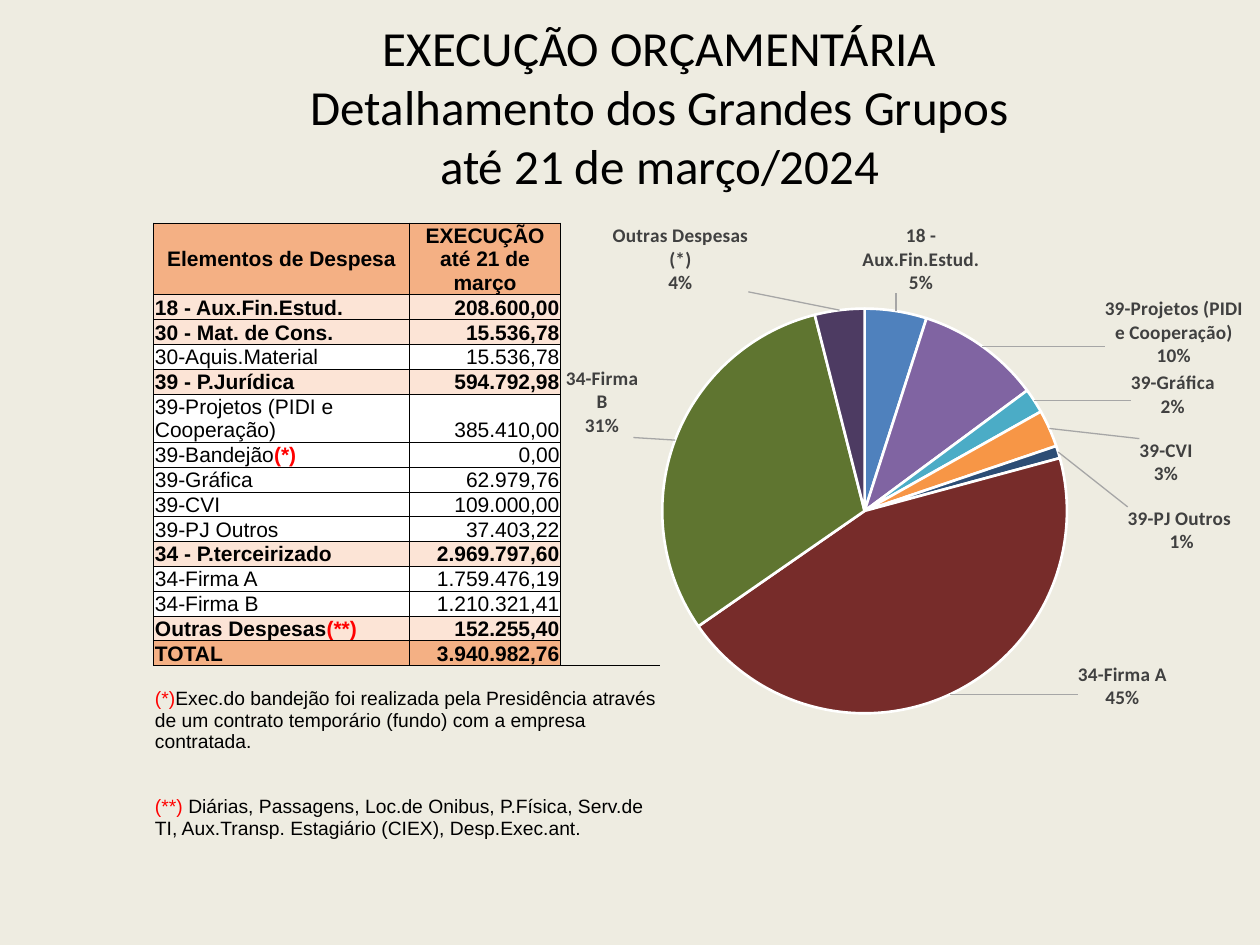
from copy import deepcopy
from dataclasses import dataclass

from lxml.etree import SubElement
from pptx import Presentation
from pptx.chart.data import CategoryChartData
from pptx.dml.color import RGBColor
from pptx.enum.chart import XL_CHART_TYPE, XL_LABEL_POSITION
from pptx.enum.text import MSO_ANCHOR, PP_ALIGN
from pptx.oxml import parse_xml
from pptx.oxml.ns import nsdecls, qn
from pptx.util import Inches, Pt

BLACK = RGBColor(0x00, 0x00, 0x00)
WHITE = RGBColor(0xFF, 0xFF, 0xFF)
RED = RGBColor(0xFF, 0x00, 0x00)
CREAM = RGBColor(0xEE, 0xEC, 0xE1)
ORANGE = RGBColor(0xF4, 0xB0, 0x84)
PEACH = RGBColor(0xFC, 0xE4, 0xD6)
LABEL_GRAY = RGBColor(0x40, 0x40, 0x40)
NO_TABLE_STYLE = "{2D5ABB26-0587-4C30-8999-92F81FD0307C}"


@dataclass
class Expense:
    name: str
    amount: str
    fill: RGBColor = WHITE
    mark: str = ""


@dataclass
class Slice:
    name: str
    percent: int
    color: str
    label_offset: tuple[float, float] | None = None


EXPENSES = [
    Expense("18 - Aux.Fin.Estud.", "208.600,00", PEACH),
    Expense("30 - Mat. de Cons.", "15.536,78", PEACH),
    Expense("30-Aquis.Material", "15.536,78"),
    Expense("39 - P.Jurídica", "594.792,98", PEACH),
    Expense("39-Projetos (PIDI e Cooperação)", "385.410,00"),
    Expense("39-Bandejão", "0,00", mark="(*)"),
    Expense("39-Gráfica", "62.979,76"),
    Expense("39-CVI", "109.000,00"),
    Expense("39-PJ Outros", "37.403,22"),
    Expense("34 - P.terceirizado", "2.969.797,60", PEACH),
    Expense("34-Firma A", "1.759.476,19"),
    Expense("34-Firma B", "1.210.321,41"),
    Expense("Outras Despesas", "152.255,40", PEACH, "(**)"),
    Expense("TOTAL", "3.940.982,76", ORANGE),
]
NOTES = [
    ("(*)", "Exec.do bandejão foi realizada pela Presidência através de um contrato "
            "temporário (fundo) com a empresa contratada."),
    ("(**) ", "Diárias, Passagens, Loc.de Onibus, P.Física, Serv.de TI, "
              "Aux.Transp. Estagiário (CIEX), Desp.Exec.ant."),
]
SLICES = [
    Slice("18 - Aux.Fin.Estud.", 5, "4F81BD", (-0.05, -0.02)),
    Slice("30-Bandejão", 0, "C0504D"),
    Slice("30-Aquis.Material", 0, "9BBB59"),
    Slice("39-Projetos (PIDI e Cooperação)", 10, "8064A2", (0.17, 0.05)),
    Slice("39-Gráfica", 2, "4BACC6", (0.13, 0.04)),
    Slice("39-CVI", 3, "F79646", (0.12, 0.11)),
    Slice("39-PJ Outros ", 1, "2C4D75", (0.09, 0.19)),
    Slice("34-Firma A", 45, "772C2A", (0.18, -0.07)),
    Slice("34-Firma B", 31, "5F7530", (-0.05, 0)),
    Slice("Outras Despesas (*)", 4, "4D3B62", (-0.13, -0.02)),
]


def add_title(slide) -> None:
    title = slide.shapes.title
    title.left, title.top = Inches(0.51), Inches(0.13)
    title.width, title.height = Inches(9.45), Inches(1.42)
    title.text_frame.text = (
        "EXECUÇÃO ORÇAMENTÁRIA\vDetalhamento dos Grandes Grupos\vaté 21 de março/2024"
    )
    para = title.text_frame.paragraphs[0]
    para.alignment = PP_ALIGN.CENTER
    para.font.size, para.font.name = Pt(28), "Calibri"
    para.font.color.rgb = BLACK


def manual_layout(x: float, y: float, extra: str = "") -> str:
    return (f'<c:layout {nsdecls("c")}><c:manualLayout>{extra}'
            f'<c:x val="{x}"/><c:y val="{y}"/>')


def slice_label(index: int, item: Slice, text_properties):
    head = f'<c:dLbl {nsdecls("c")}><c:idx val="{index}"/>'
    if item.label_offset is None:
        return parse_xml(head + '<c:delete val="1"/></c:dLbl>')
    label = parse_xml(
        head + manual_layout(*item.label_offset) + "</c:manualLayout></c:layout>"
        '<c:dLblPos val="outEnd"/><c:showLegendKey val="0"/><c:showVal val="0"/>'
        '<c:showCatName val="1"/><c:showSerName val="0"/><c:showPercent val="1"/>'
        '<c:showBubbleSize val="0"/><c:separator>\n</c:separator></c:dLbl>'
    )
    label.insert(2, deepcopy(text_properties))
    return label


def add_pie(slide) -> None:
    data = CategoryChartData()
    data.categories = [item.name for item in SLICES]
    data.add_series("Series 1", [item.percent for item in SLICES])
    chart = slide.shapes.add_chart(
        XL_CHART_TYPE.PIE, Inches(4.49), Inches(1.78), Inches(5.51), Inches(4.36), data
    ).chart
    chart.has_legend = chart.has_title = False
    chart.font.size, chart.font.name = Pt(11), "Calibri"
    chart.font.color.rgb = BLACK
    plot = chart.plots[0]
    plot.vary_by_categories = True
    series = plot.series[0]
    for index, item in enumerate(SLICES):
        wedge = series.points[index].format
        wedge.fill.solid()
        wedge.fill.fore_color.rgb = RGBColor.from_string(item.color)
        wedge.line.color.rgb = WHITE
        wedge.line.width = Pt(1.5)

    labels = series.data_labels
    labels.show_value = False
    labels.show_category_name = labels.show_percentage = True
    labels.number_format, labels.number_format_is_linked = "0%", False
    labels.position = XL_LABEL_POSITION.OUTSIDE_END
    labels.font.size, labels.font.name, labels.font.bold = Pt(11), "Calibri", True
    labels.font.color.rgb = LABEL_GRAY
    element = labels._element
    text_properties = element.find(qn("c:txPr"))
    for index, item in enumerate(SLICES):
        element.insert(index, slice_label(index, item, text_properties))
    for old in element.findall(qn("c:showLeaderLines")):
        element.remove(old)
    SubElement(element, qn("c:separator")).text = "\n"
    SubElement(element, qn("c:showLeaderLines")).set("val", "1")
    element.append(parse_xml(
        f'<c:leaderLines {nsdecls("c", "a")}><c:spPr><a:ln w="9525"><a:solidFill>'
        '<a:srgbClr val="A6A6A6"/></a:solidFill></a:ln></c:spPr></c:leaderLines>'
    ))

    area = chart._chartSpace.chart.plotArea
    for old in area.findall(qn("c:layout")):
        area.remove(old)
    modes = ('<c:layoutTarget val="inner"/><c:xMode val="edge"/><c:yMode val="edge"/>')
    area.insert(0, parse_xml(
        manual_layout(0.139, 0.134, modes)
        + '<c:w val="0.583"/><c:h val="0.776"/></c:manualLayout></c:layout>'
    ))


def add_borders(cell) -> None:
    properties = cell._tc.get_or_add_tcPr()
    for position, side in enumerate(("lnL", "lnR", "lnT", "lnB")):
        properties.insert(position, parse_xml(
            f'<a:{side} {nsdecls("a")} w="6350"><a:solidFill>'
            f'<a:srgbClr val="000000"/></a:solidFill></a:{side}>'
        ))


def write_cell(cell, spans: list[tuple[str, RGBColor]], size: int = 12,
               bold: bool = False, alignment=PP_ALIGN.LEFT, anchor=MSO_ANCHOR.BOTTOM,
               fill: RGBColor | None = None) -> None:
    cell.margin_left = cell.margin_right = cell.margin_top = Inches(0.01)
    cell.margin_bottom = 0
    cell.vertical_anchor = anchor
    if fill is None:
        cell.fill.background()
    else:
        cell.fill.solid()
        cell.fill.fore_color.rgb = fill
        add_borders(cell)
    para = cell.text_frame.paragraphs[0]
    para.alignment = alignment
    para.font.size, para.font.name, para.font.bold = Pt(size), "Arial", bold
    for text, color in spans:
        span = para.add_run()
        span.text = text
        span.font.color.rgb = color
    if not spans:
        SubElement(para._p, qn("a:endParaRPr")).set("sz", str(size * 100))


def add_expense_table(slide) -> None:
    widths = [2.03, 1.2, 0.79]
    heights = [0.53] + [0.18] * len(EXPENSES) + [0.69] * len(NOTES)
    table = slide.shapes.add_table(
        len(heights), len(widths), Inches(1.22), Inches(1.77),
        Inches(sum(widths)), Inches(sum(heights))
    ).table
    table.first_row = table.horz_banding = False
    table._tbl.tblPr.find(qn("a:tableStyleId")).text = NO_TABLE_STYLE
    for column, width in zip(table.columns, widths):
        column.width = Inches(width)
    for row, height in zip(table.rows, heights):
        row.height = Inches(height)

    header = dict(bold=True, alignment=PP_ALIGN.CENTER, fill=ORANGE)
    write_cell(table.cell(0, 0), [("Elementos de Despesa", BLACK)],
               anchor=MSO_ANCHOR.MIDDLE, **header)
    write_cell(table.cell(0, 1), [("EXECUÇÃO até 21 de março", BLACK)], **header)
    write_cell(table.cell(0, 2), [])
    for row, expense in enumerate(EXPENSES, 1):
        style = dict(bold=expense.fill != WHITE, fill=expense.fill)
        name_cell = table.cell(row, 0)
        write_cell(name_cell, [(expense.name, BLACK)], **style)
        if expense.mark:
            span = name_cell.text_frame.paragraphs[0].add_run()
            span.text = expense.mark
            span.font.bold = True
            span.font.color.rgb = RED
        write_cell(table.cell(row, 1), [(expense.amount, BLACK)],
                   alignment=PP_ALIGN.RIGHT, **style)
        write_cell(table.cell(row, 2), [])
    for row, (mark, note) in enumerate(NOTES, len(EXPENSES) + 1):
        table.cell(row, 0).merge(table.cell(row, 2))
        write_cell(table.cell(row, 0), [(mark, RED), (note, BLACK)], size=11)


def main() -> None:
    deck = Presentation()
    deck.slide_width, deck.slide_height = Inches(10), Inches(7.5)
    slide = deck.slides.add_slide(deck.slide_layouts[5])
    slide.background.fill.solid()
    slide.background.fill.fore_color.rgb = CREAM
    add_title(slide)
    add_pie(slide)
    add_expense_table(slide)
    deck.save("out.pptx")


if __name__ == "__main__":
    main()
